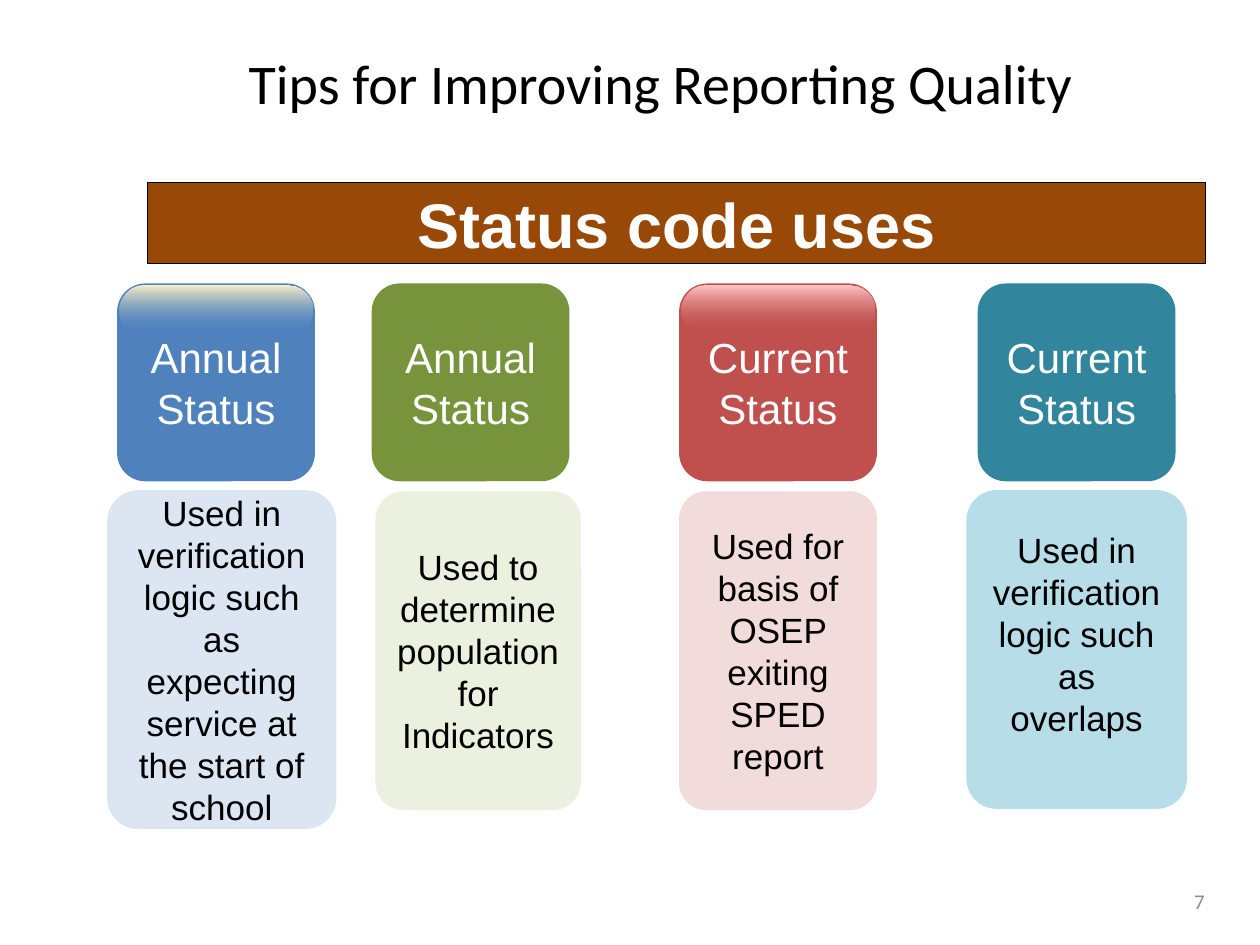
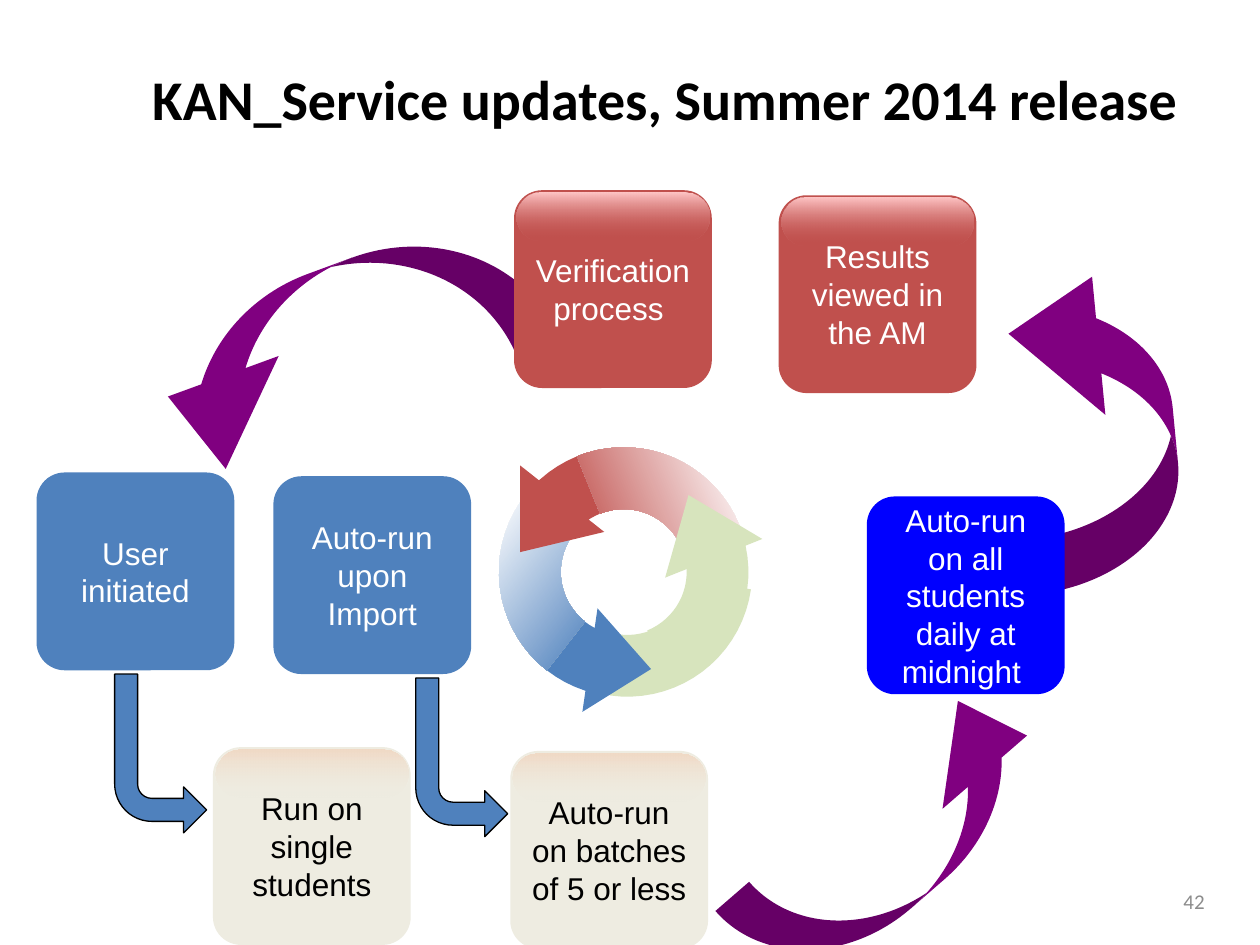
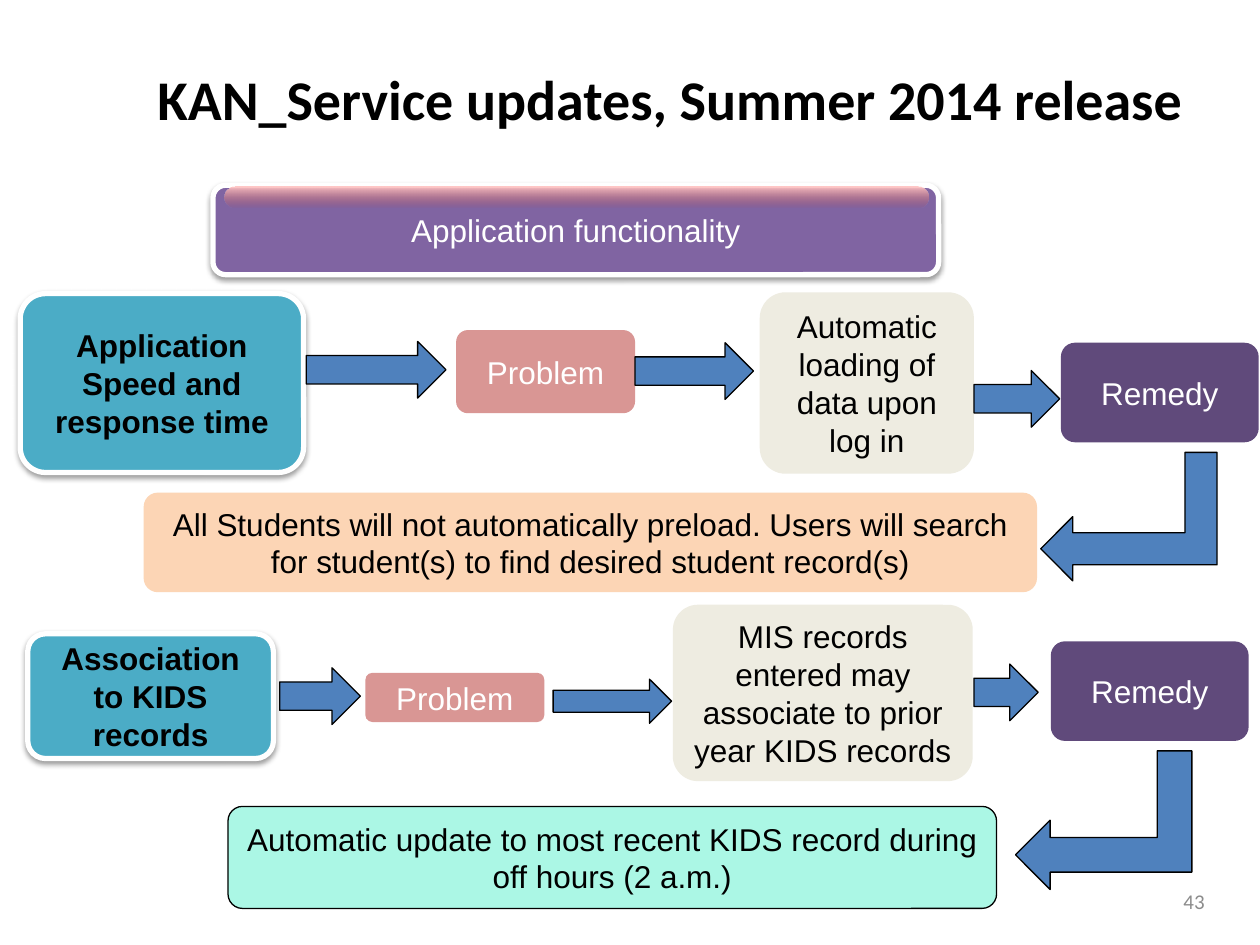
from math import cos, radians, sin

from lxml import etree
from pptx import Presentation
from pptx import util as u
from pptx.dml.color import RGBColor
from pptx.enum import shapes, text
from pptx.oxml import ns

KIND = shapes.MSO_SHAPE
BLACK, WHITE, GREY = "000000", "FFFFFF", "8C8C8C"
BLUE, RED, GREEN, PURPLE = "4F81BD", "C0504D", "D7E4BD", "800080"
CREAM, ROSE, PLUM, TEAL = "EEECE1", "D99694", "604A7B", "4BACC6"
PINK, PEACH, LEMON = "FFC6C6", "F1DAC6", "FCF0C7"
SIDE = 157
ROUND = 0.142
UPDATES = "KAN_Service updates, Summer 2014 release"


def px(num):
    """Turn px into EMU, at 100 px to the inch."""
    return u.Emu(round(num * 9144))


def hue(code):
    """Turn a hex string into a colour."""
    return RGBColor.from_string(code)


def node(base, tag, **attrs):
    """Add a drawing element below another one."""
    vals = {key: str(val) for key, val in attrs.items()}
    return etree.SubElement(base, ns.qn(tag), vals)


def cast(effects, code, alpha, blur, dist, turn):
    """Add an outer shadow to a list of effects."""
    outer = node(effects, "a:outerShdw", blurRad=u.Pt(blur), dist=u.Pt(dist),
                 dir=turn * 60000, algn="ctr", rotWithShape=0)
    node(node(outer, "a:srgbClr", val=code), "a:alpha", val=alpha * 1000)


def paint(shape, fill, line=None, width=0.75):
    """Give a shape a plain fill and a line, or none."""
    shape.shadow.inherit = False
    shape.fill.solid()
    shape.fill.fore_color.rgb = hue(fill)
    if line:
        shape.line.color.rgb = hue(line)
        shape.line.width = u.Pt(width)
    else:
        shape.line.fill.background()


def blend(shape, first, last, turn, clear=False):
    """Fill a shape with a blend, turned clockwise, that may fade out."""
    shape.fill.gradient()
    shape.fill.gradient_angle = (360 - turn) % 360
    for stop, code in zip(shape.fill.gradient_stops, (first, last)):
        stop.color.rgb = hue(code)
    if clear:
        ends = shape.fill._xPr.findall(".//" + ns.qn("a:srgbClr"))
        node(ends[-1], "a:alpha", val=0)


def write(shape, words, size, code=BLACK, align="CENTER", face="Arial",
          bold=False, wrap=True, foot=5):
    """Write one paragraph in a shape and return its run."""
    frame = shape.text_frame
    form = {"word_wrap": wrap, "margin_bottom": px(foot),
            "vertical_anchor": text.MSO_ANCHOR.MIDDLE}
    for key, val in form.items():
        setattr(frame, key, val)
    para = frame.paragraphs[0]
    para.alignment = getattr(text.PP_ALIGN, align)
    run = para.add_run()
    run.text = words
    for key, val in {"size": u.Pt(size), "name": face, "bold": bold}.items():
        setattr(run.font, key, val)
    run.font.color.rgb = hue(code)
    return run


def shape(slide, kind, box, fill, line=None, width=0.75, adj=(), turn=0, flip=None):
    """Draw a preset shape."""
    item = slide.shapes.add_shape(kind, *map(px, box))
    for idx, val in enumerate(adj):
        item.adjustments[idx] = val
    item.rotation = turn
    if flip:
        item._element.spPr.find(ns.qn("a:xfrm")).set(flip, "1")
    paint(item, fill, line, width)
    return item


def card(slide, box, words, fill, code=WHITE, size=18, line=None, adj=ROUND, **form):
    """Draw a rounded card with text."""
    item = shape(slide, KIND.ROUNDED_RECTANGLE, box, fill, line, adj=[adj])
    write(item, words, size, code, **form)
    return item


def raised(slide, box, words, fill, code, bold):
    """Draw a card with a white rim and a soft shadow."""
    item = card(slide, box, words, fill, code, bold=bold)
    paint(item, fill, WHITE, 3)
    effects = item._element.spPr.find(ns.qn("a:effectLst"))
    cast(effects, BLACK, 38, 3.1, 1.6, 90)


def gloss(slide, box, top, base):
    """Lay a shine that fades downward."""
    item = shape(slide, KIND.ROUNDED_RECTANGLE, box, base, adj=[0.5])
    blend(item, top, base, 90, clear=True)


def tile(slide, left, top, words, fill, code=WHITE, size=18, shine=None):
    """Draw a square card, shiny if asked."""
    card(slide, (left, top, SIDE, SIDE), words, fill, code, size)
    if shine:
        gloss(slide, (left + 2, top + 2, 153, 38), shine, fill)


def arrow(slide, kind, box, **form):
    """Draw a blue block arrow with a black outline."""
    shape(slide, kind, box, BLUE, BLACK, **form)


def band(slide, mid, start, fill, turn=None):
    """Draw a quarter of the ring, from a start angle."""
    def point(reach, deg):
        return (px(mid + reach * cos(radians(deg))),
                px(454 + reach * sin(radians(deg))))

    steps = range(start, start + 91, 5)
    outer = [point(99, deg) for deg in steps]
    inner = [point(50, deg) for deg in reversed(steps)]
    build = slide.shapes.build_freeform(*outer[0])
    build.add_line_segments(outer[1:] + inner, close=True)
    item = build.convert_to_shape()
    paint(item, fill)
    if turn is not None:
        blend(item, WHITE, fill, turn)


def label(slide, box, words, size, **form):
    """Place a text box and return its run."""
    return write(slide.shapes.add_textbox(*map(px, box)), words, size, **form)


def head(slide, box, words, **form):
    """Place the slide title."""
    return label(slide, box, words, 32, face="Calibri", **form)


def strong(slide, left, width):
    """Place the bold title with its pale shadow."""
    run = head(slide, (left, 50, width, 56), UPDATES, align="LEFT", bold=True)
    fill = run._r.rPr.find(ns.qn("a:solidFill"))
    effects = etree.Element(ns.qn("a:effectLst"))
    cast(effects, CREAM, 100, 0, 2, 45)
    fill.addnext(effects)


def page(slide, num):
    """Place the page number."""
    label(slide, (733, 695, 233, 40), num, 12, code=GREY, align="RIGHT", face="Calibri")


def codes(slide):
    """Build the slide on status codes."""
    notes = [
        ((767, 389, 175, 253), "Used in verification logic such as overlaps", "B7DEE8", 31),
        ((539, 390, 157, 253), "Used for basis of OSEP exiting SPED report", "F2DCDB", 5),
        ((298, 390, 163, 253), "Used to determine population for Indicators", "EBF1DE", 5),
        ((85, 389, 182, 269), "Used in verification logic such as expecting service "
                              "at the start of school", "DCE6F2", 5)]
    for box, words, fill, foot in notes:
        card(slide, box, words, fill, BLACK, 20, adj=0.137, foot=foot)
    tops = [(93, "Annual", BLUE, LEMON), (295, "Annual", "77933C", None),
            (539, "Current", RED, PINK), (776, "Current", "31859C", None)]
    for left, word, fill, shine in tops:
        tile(slide, left, 225, word + " Status", fill, size=24, shine=shine)
    head(slide, (83, 30, 883, 70), "Tips for Improving Reporting Quality")
    banner = shape(slide, KIND.RECTANGLE, (117, 145, 840, 64), "984807", BLACK)
    write(banner, "Status code uses", 36, WHITE, bold=True, wrap=False)
    page(slide, "7")


def cycle(slide):
    """Build the slide on the verification cycle."""
    for box, turn, flip, adj in [
            ((738, 273, 263, 124), 264.5, "flipV", (0.354, 0.888, 0.567)),
            ((564, 613, 299, 100), 319.1, "flipV", (0.354, 0.888, 0.567)),
            ((104, 212, 332, 123), 339.9, "flipH", (0.304, 0.761, 0.567))]:
        shape(slide, KIND.CURVED_DOWN_ARROW, box, PURPLE, adj=adj, turn=turn, flip=flip)

    def tip(box, fill, turn):
        shape(slide, KIND.ISOSCELES_TRIANGLE, box, fill, turn=turn)

    band(slide, 495, 218, RED)
    band(slide, 495, 248, RED, 158)
    tip((515, 391, 83, 54), GREEN, 338.3)
    band(slide, 495, 338, GREEN)
    band(slide, 498, 8, GREEN)
    tip((451, 503, 83, 49), BLUE, 98.3)
    band(slide, 495, 98, BLUE)
    band(slide, 495, 128, BLUE, 38)
    tip((387, 390, 85, 54), RED, 218.3)

    for left, top, words, fill, code, shine in [
            (29, 375, "User initiated", BLUE, WHITE, None),
            (169, 593, "Run on single students", CREAM, BLACK, PEACH),
            (408, 151, "Verification process ", RED, WHITE, PINK),
            (688, 394, "Auto-run on all students daily at midnight ", "0000FF", WHITE, None),
            (405, 596, "Auto-run on batches of 5 or less", CREAM, BLACK, PEACH),
            (217, 378, "Auto-run upon Import", BLUE, WHITE, None),
            (618, 155, "Results viewed in the AM", RED, WHITE, PINK)]:
        tile(slide, left, top, words, fill, code, shine=shine)
    for left, top in [(91, 535), (330, 538)]:
        arrow(slide, KIND.BENT_ARROW, (left, top, 73, 126), turn=180, flip="flipH",
              adj=(0.25, 0.25, 0.25, 0.405))
    strong(slide, 111, 872)
    page(slide, "42")


def fixes(slide):
    """Build the slide on problems and remedies."""
    raised(slide, (169, 147, 576, 71), "Application functionality", "8064A2", WHITE, False)
    gloss(slide, (178, 148, 559, 17), PINK, RED)
    raised(slide, (16, 233, 225, 142), "Application Speed and response time", TEAL, BLACK, True)
    raised(slide, (22, 503, 195, 99), "Association to KIDS records", TEAL, BLACK, True)
    for box, words, fill, code, line in [
            ((362, 262, 142, 66), "Problem", ROSE, WHITE, None),
            ((290, 534, 142, 39), "Problem", ROSE, WHITE, None),
            ((842, 272, 157, 79), "Remedy", PLUM, WHITE, None),
            ((834, 509, 157, 79), "Remedy", PLUM, WHITE, None),
            ((603, 232, 170, 144), "Automatic loading of data upon log in", CREAM, BLACK, None),
            ((534, 480, 238, 140), "MIS records entered may associate to prior year "
                                   "KIDS records", CREAM, BLACK, None),
            ((114, 391, 709, 79), "All Students will not automatically preload. Users will "
                                  "search for student(s) to find desired student record(s)",
             "FCD5B5", BLACK, None),
            ((181, 640, 610, 81), "Automatic update to most recent KIDS record during "
                                  "off hours (2 a.m.)", "ABF7E5", BLACK, BLACK)]:
        card(slide, box, words, fill, code, line=line)
    for box in [(243, 271, 111, 45), (504, 272, 94, 45), (773, 294, 68, 45),
                (222, 530, 64, 45), (439, 539, 94, 35), (773, 527, 51, 45)]:
        arrow(slide, KIND.RIGHT_ARROW, box)
    for box in [(845, 340, 102, 140), (821, 581, 110, 140)]:
        arrow(slide, KIND.BENT_UP_ARROW, box, turn=90, flip="flipV")
    strong(slide, 115, 838)
    page(slide, "43")


def main():
    """Build and save the deck."""
    deck = Presentation()
    deck.slide_width, deck.slide_height = px(1000), px(750)
    for build in (codes, cycle, fixes):
        build(deck.slides.add_slide(deck.slide_layouts[6]))
    deck.save("out.pptx")


if __name__ == "__main__":
    main()
